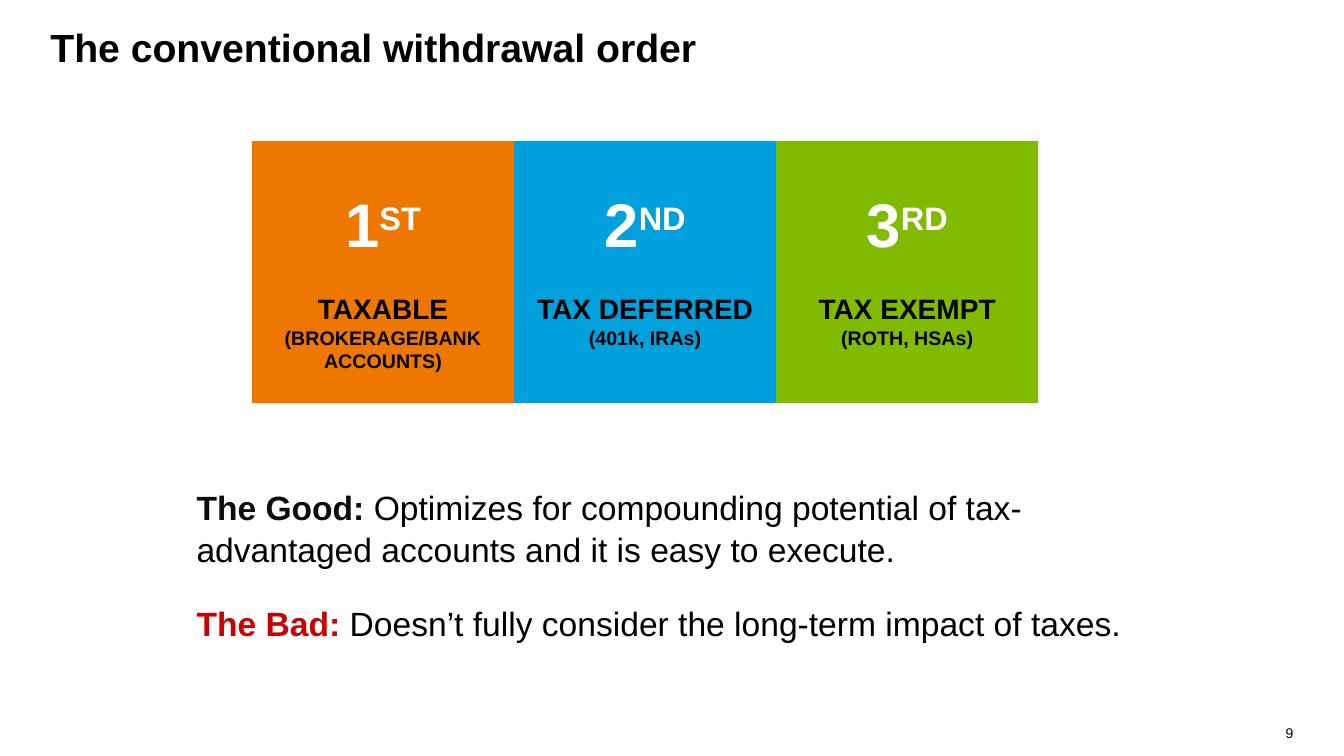
from lxml.etree import SubElement
from pptx import Presentation
from pptx.dml.color import RGBColor
from pptx.enum.shapes import MSO_SHAPE as Shape
from pptx.enum.text import MSO_ANCHOR as Anchor, MSO_AUTO_SIZE as AutoSize, PP_ALIGN as Align
from pptx.oxml.ns import qn
from pptx.util import Pt

BLACK, WHITE = "000000", "FFFFFF"


def color(hex_code):
    return RGBColor.from_string(hex_code)


class SlideBuilder:
    """Holds the text style and the slide being built."""

    font_name = "Arial"

    def __init__(self, slide):
        self.slide = slide

    def style(self, font, size, hex_code=BLACK, bold=False):
        font.name, font.size, font.bold = self.font_name, Pt(size), bold
        font.color.rgb = color(hex_code)

    def place(self, shape, left, top, width, height):
        shape.left, shape.top, shape.width, shape.height = map(Pt, (left, top, width, height))

    def frame(self, shape, anchor=Anchor.TOP, insets=(0, 0, 0, 0)):
        frame = shape.text_frame
        frame.word_wrap = True
        frame.auto_size = AutoSize.NONE
        frame.vertical_anchor = anchor
        (frame.margin_left, frame.margin_top,
         frame.margin_right, frame.margin_bottom) = map(Pt, insets)
        return frame

    def title(self, text, box, size):
        heading = self.slide.shapes.title
        self.place(heading, *box)
        line = self.frame(heading).paragraphs[0]
        line.text, line.alignment = text, Align.LEFT
        self.style(line.font, size, bold=True)

    def page_number(self, text, box, size):
        number = self.slide.shapes.add_textbox(*map(Pt, box))
        line = self.frame(number, Anchor.BOTTOM).paragraphs[0]
        line.text, line.alignment = text, Align.RIGHT
        self.style(line.font, size)

    def step(self, box, fill, rank, suffix, account, examples):
        tile = self.slide.shapes.add_shape(Shape.RECTANGLE, *map(Pt, box))
        tile.shadow.inherit = False
        tile.fill.solid()
        tile.fill.fore_color.rgb = color(fill)
        tile.line.fill.background()
        frame = self.frame(tile, insets=(7.2, 32, 7.2, 3.6))

        ordinal = frame.paragraphs[0]
        ordinal.alignment = Align.CENTER
        for text, size in ((rank, 44), (suffix, 40)):
            part = ordinal.add_run()
            part.text = text
            self.style(part.font, size, WHITE, bold=True)
        part.font._element.set("baseline", "30000")

        for text, size, before in ((account, 20, 23), (examples, 14, 0)):
            line = frame.add_paragraph()
            line.text, line.alignment = text, Align.CENTER
            line.space_before = Pt(before)
            self.style(line.font, size, bold=True)

    def verdicts(self, box, size, entries):
        body = self.slide.placeholders[1]
        self.place(body, *box)
        frame = self.frame(body)
        for index, (label, hex_code, remark) in enumerate(entries):
            line = frame.add_paragraph() if index else frame.paragraphs[0]
            properties = line._p.get_or_add_pPr()
            properties.set("marL", "0")
            properties.set("indent", "0")
            SubElement(properties, qn("a:buNone"))
            line.line_spacing = 1.04
            line.space_before = Pt(4.8 if index else 0)
            line.space_after = Pt(18)
            for text, run_color, bold in ((label, hex_code, True), (remark, BLACK, False)):
                part = line.add_run()
                part.text = text
                self.style(part.font, size, run_color, bold)


def main():
    deck = Presentation()
    deck.slide_width, deck.slide_height = Pt(960), Pt(540)
    builder = SlideBuilder(deck.slides.add_slide(deck.slide_layouts[1]))

    # Heading
    builder.title("The conventional withdrawal order", (36, 16.5, 684, 60), 28)

    # Withdrawal order: adjoining square tiles
    side = 187.2
    steps = [
        ("ED7700", "1", "ST", "TAXABLE", "(BROKERAGE/BANK ACCOUNTS)"),
        ("00A0DC", "2", "ND", "TAX DEFERRED", "(401k, IRAs)"),
        ("81BB00", "3", "RD", "TAX EXEMPT", "(ROTH, HSAs)"),
    ]
    for index, step in enumerate(steps):
        builder.step((180 + index * side, 100.8, side, side), *step)

    # Good and bad sides
    builder.verdicts((140.4, 347, 672.5, 122.4), 24, [
        ("The Good: ", "0D0D0D", "Optimizes for compounding potential of "
         "tax-advantaged accounts and it is easy to execute."),
        ("The Bad: ", "CB0000", "Doesn’t fully consider the long-term impact of taxes."),
    ])

    # Page number
    builder.page_number("9", (895, 514.8, 28.8, 14.4), 10)

    deck.save("out.pptx")


if __name__ == "__main__":
    main()
